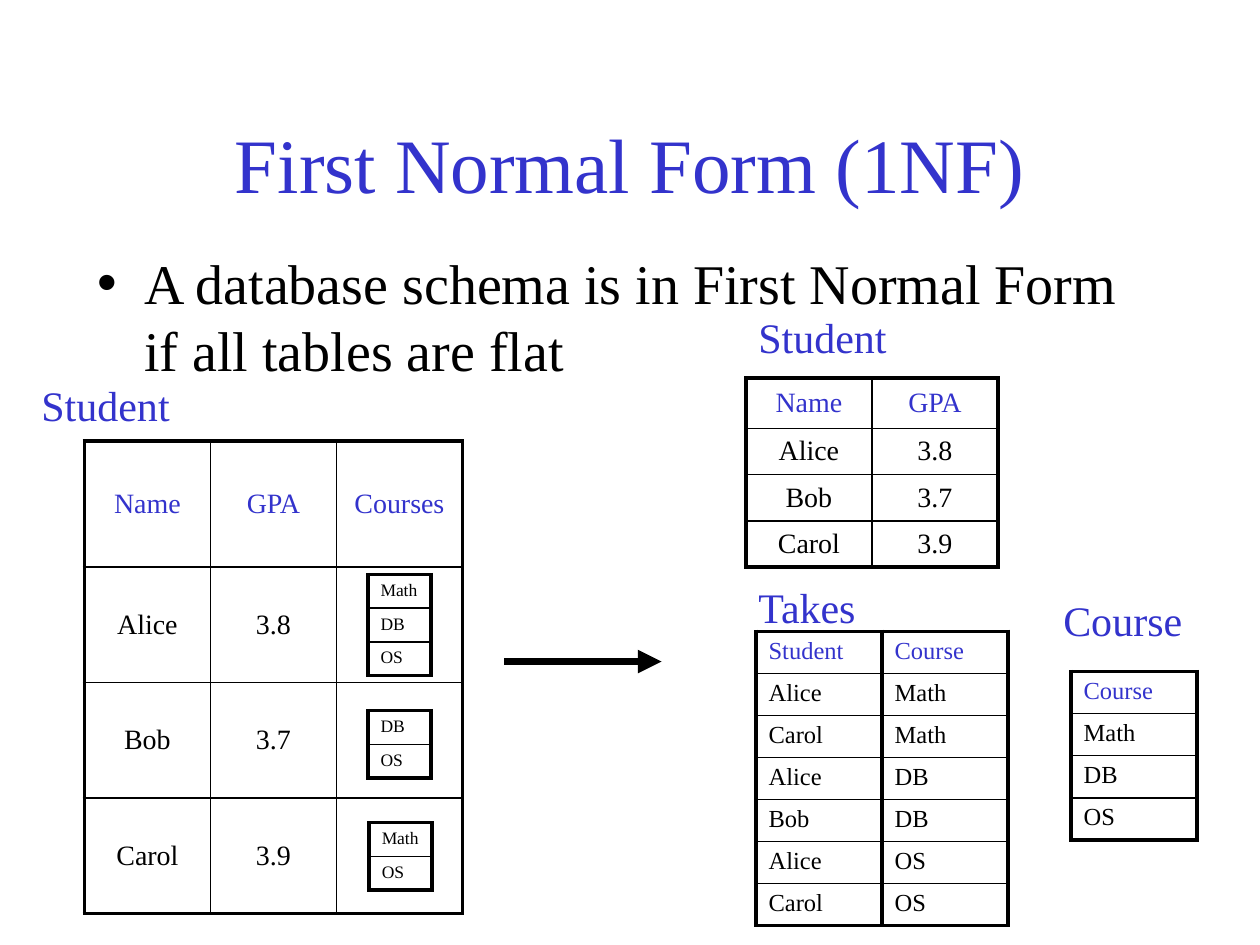
from lxml import etree
from pptx import Presentation
from pptx.dml.color import RGBColor
from pptx.enum.shapes import MSO_CONNECTOR
from pptx.enum.text import MSO_ANCHOR, MSO_AUTO_SIZE, PP_ALIGN
from pptx.oxml.ns import qn
from pptx.util import Inches, Pt

LEFT, CENTER = PP_ALIGN.LEFT, PP_ALIGN.CENTER
TOP, MIDDLE = MSO_ANCHOR.TOP, MSO_ANCHOR.MIDDLE
NO_AUTOFIT = MSO_AUTO_SIZE.NONE
STRAIGHT = MSO_CONNECTOR.STRAIGHT

COLORS = {"accent": "3333CC", "text": "000000"}
FONT = "Times New Roman"
THICK, THIN = 2.25, 1

GRADES = [("Name", "GPA"), ("Alice", "3.8"), ("Bob", "3.7"), ("Carol", "3.9")]
TAKES = [("Student", "Course"), ("Alice", "Math"), ("Carol", "Math"), ("Alice", "DB"),
         ("Bob", "DB"), ("Alice", "OS"), ("Carol", "OS")]
COURSES = [("Course",), ("Math",), ("DB",), ("OS",)]


def write_text(text_frame, text, size, color="text", align=LEFT):
    paragraph = text_frame.paragraphs[0]
    paragraph.alignment = align
    run = paragraph.add_run()
    run.text = text
    run.font.name = FONT
    run.font.size = Pt(size)
    run.font.bold = False
    run.font.color.rgb = RGBColor.from_string(COLORS[color])


def fill_placeholder(shape, box, text, **text_format):
    shape.left, shape.top, shape.width, shape.height = map(Inches, box)
    shape.text_frame.auto_size = NO_AUTOFIT
    write_text(shape.text_frame, text, **text_format)


def add_label(slide, text, left, top, width):
    box = slide.shapes.add_textbox(Inches(left), Inches(top), Inches(width), Inches(0.5))
    box.text_frame.word_wrap = False
    write_text(box.text_frame, text, size=24, color="accent")


def set_borders(cell, widths):
    """Draw the left, right, top and bottom borders in the given point widths."""
    properties = cell._tc.get_or_add_tcPr()
    for side, width in zip("LRTB", widths):
        line = etree.SubElement(properties, qn(f"a:ln{side}"), w=str(Pt(width)))
        fill = etree.SubElement(line, qn("a:solidFill"))
        etree.SubElement(fill, qn("a:srgbClr"), val=COLORS["text"])


def add_grid(slide, rows, box, size, align=LEFT, anchor=TOP, header=True,
             header_height=None, divider=THIN):
    """Add a framed table; all rows but a header of given height share the box evenly."""
    left, top, width, height = box
    last_row, last_column = len(rows) - 1, len(rows[0]) - 1
    table = slide.shapes.add_table(len(rows), len(rows[0]), *map(Inches, box)).table
    table.first_row = table.horz_banding = False
    for column in table.columns:
        column.width = Inches(width / len(rows[0]))
    first_height = header_height or height / len(rows)
    for r, values in enumerate(rows):
        row_height = first_height if r == 0 else (height - first_height) / last_row
        table.rows[r].height = Inches(row_height)
        for c, value in enumerate(values):
            cell = table.cell(r, c)
            cell.vertical_anchor = anchor
            set_borders(cell, (THICK if c == 0 else divider,
                               THICK if c == last_column else divider,
                               THICK if r == 0 else THIN,
                               THICK if r == last_row else THIN))
            cell.fill.background()
            if value:
                color = "accent" if header and r == 0 else "text"
                write_text(cell.text_frame, value, size, color, align)


def add_nested_student(slide, left, top):
    """Add the student table whose last column holds small course tables."""
    add_label(slide, "Student", left - 0.44, top - 0.54, 1.22)
    rows = [(*row, "" if r else "Courses") for r, row in enumerate(GRADES)]
    add_grid(slide, rows, (left, top, 3, 3.75), size=16, align=CENTER,
             anchor=MIDDLE, header_height=1)
    nested = [(2.25, 1.06, ("Math", "DB", "OS")),
              (2.25, 2.14, ("DB", "OS")),
              (2.26, 3.03, ("Math", "OS"))]
    for x, y, names in nested:
        box = (left + x, top + y, 0.5, 0.267 * len(names))
        add_grid(slide, [(name,) for name in names], box, size=10, header=False)


def add_flat_student(slide, left, top):
    add_label(slide, "Student", left, top - 0.58, 1.22)
    add_grid(slide, GRADES, (left, top, 2, 1.5), size=16, align=CENTER,
             anchor=MIDDLE, header_height=0.4)


def add_takes(slide, left, top):
    add_label(slide, "Takes", left - 0.08, top - 0.44, 1)
    add_grid(slide, TAKES, (left, top, 2, 2.33), size=14, divider=THICK)


def add_course(slide, left, top):
    add_label(slide, "Course", left - 0.16, top - 0.66, 1.15)
    add_grid(slide, COURSES, (left, top, 1, 1.33), size=14)


def add_arrow(slide, left, top, length):
    arrow = slide.shapes.add_connector(STRAIGHT, Inches(left), Inches(top),
                                       Inches(left + length), Inches(top))
    arrow.line.width = Pt(4.5)
    arrow.line.color.rgb = RGBColor.from_string(COLORS["text"])
    etree.SubElement(arrow.line._get_or_add_ln(), qn("a:tailEnd"), type="triangle")
    etree.SubElement(arrow._element.spPr, qn("a:effectLst"))


def main():
    presentation = Presentation()
    presentation.slide_width, presentation.slide_height = Inches(10), Inches(7.5)
    title_and_content = presentation.slide_layouts[1]
    slide = presentation.slides.add_slide(title_and_content)
    fill_placeholder(slide.shapes.title, (0.75, 0.67, 8.5, 1.25),
                     "First Normal Form (1NF)", size=44, color="accent", align=CENTER)
    fill_placeholder(slide.placeholders[1], (0.67, 1.92, 8.5, 4.5),
                     "A database schema is in First Normal Form if all tables are flat",
                     size=32)
    add_nested_student(slide, 0.67, 3.5)
    add_flat_student(slide, 5.92, 3)
    add_course(slide, 8.5, 5.33)
    add_takes(slide, 6, 5.01)
    add_arrow(slide, 4, 5.25, 1.25)
    presentation.save("out.pptx")


if __name__ == "__main__":
    main()
